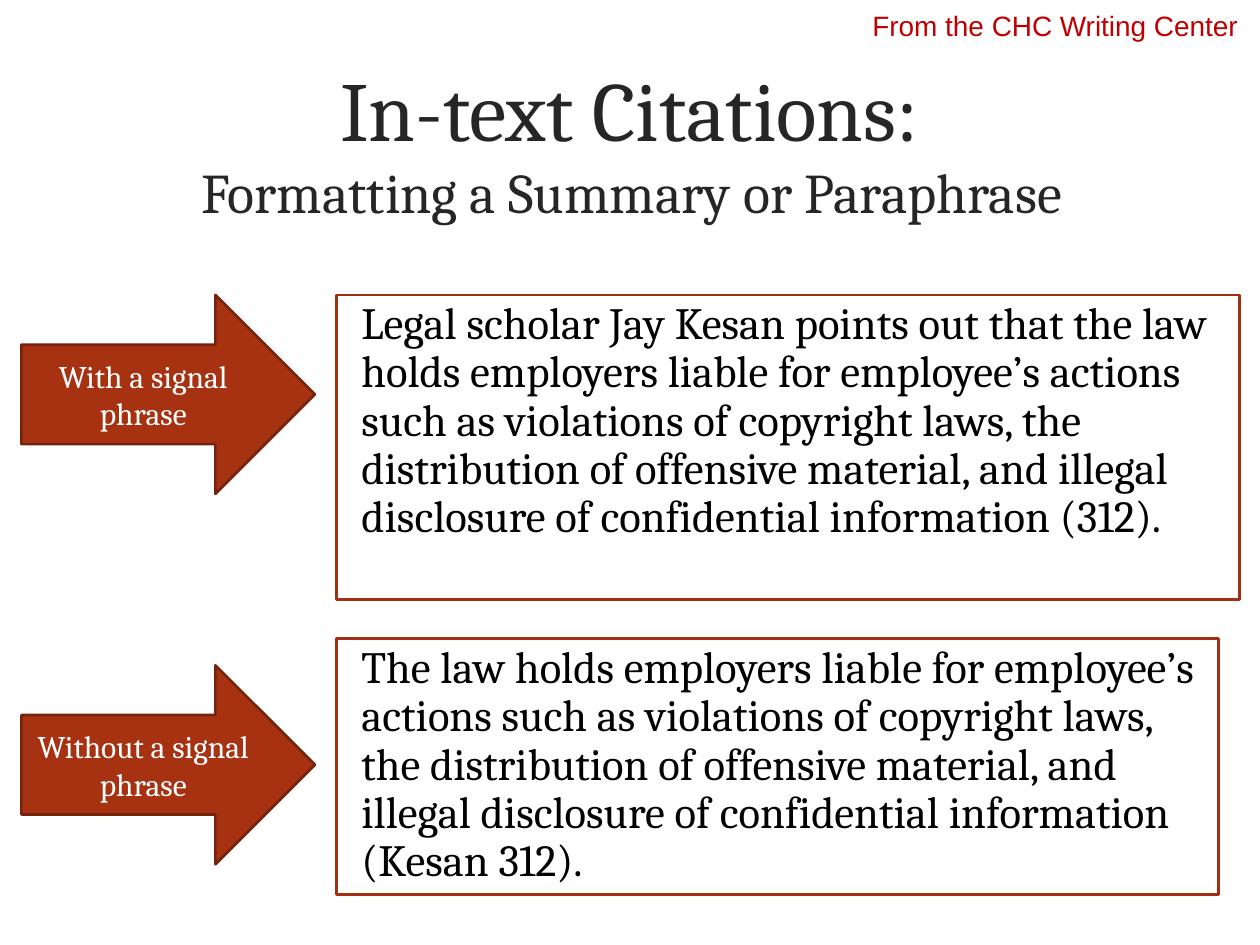
from pptx import Presentation
from pptx.dml.color import RGBColor
from pptx.enum import shapes, text
from pptx.util import Inches, Pt

TITLE_INK = RGBColor(0x26, 0x26, 0x26)
BLACK = RGBColor(0, 0, 0)
WHITE = RGBColor(0xFF, 0xFF, 0xFF)
RUST = RGBColor(0xA6, 0x32, 0x12)
ARROW_EDGE = RGBColor(0x75, 0x23, 0x0C)
BOX_EDGE = RGBColor(0x9F, 0x30, 0x11)
RED = RGBColor(0xC0, 0, 0)

TITLE_LINES = [("In-text Citations: ", 48),
               ("Formatting a Summary or Paraphrase ", 32)]
CREDIT = "From the CHC Writing Center"
LIABILITY = ("holds employers liable for employee’s actions such as violations "
             "of copyright laws, the distribution of offensive material, and "
             "illegal disclosure of confidential information")

# label, arrow top, example, (box top, width, height)
EXAMPLES = [
    ("With a signal phrase", 2.34,
     f"Legal scholar Jay Kesan points out that the law {LIABILITY} (312).",
     (2.34, 7.17, 2.42)),
    ("Without a signal phrase", 5.28,
     f"The law {LIABILITY} (Kesan 312).",
     (5.07, 7, 2.03)),
]
ARROW_LEFT, ARROW_WIDTH, ARROW_HEIGHT = 0.17, 2.33, 1.58
BOX_LEFT = 2.67


def style_run(run, size, color, name="Cambria"):
    run.font.size = Pt(size)
    run.font.name = name
    run.font.color.rgb = color


def write(shape, words, size, color, align, anchor, name="Cambria"):
    frame = shape.text_frame
    frame.word_wrap = True
    frame.vertical_anchor = anchor
    frame.text = words
    paragraph = frame.paragraphs[0]
    paragraph.alignment = align
    style_run(paragraph.runs[0], size, color, name)
    return paragraph


def add_panel(slide, preset, bounds, fill, edge):
    panel = slide.shapes.add_shape(preset, *map(Inches, bounds))
    panel.shadow.inherit = False
    panel.fill.solid()
    panel.fill.fore_color.rgb = fill
    panel.line.color.rgb = edge
    panel.line.width = Pt(1.5)
    return panel


def add_title(slide):
    title = slide.shapes.title
    title.left, title.top, title.width, title.height = map(
        Inches, (0.67, 0.33, 8.79, 1.58))
    frame = title.text_frame
    frame.auto_size = text.MSO_AUTO_SIZE.NONE
    frame.vertical_anchor = text.MSO_ANCHOR.MIDDLE
    paragraph = frame.paragraphs[0]
    paragraph.text = "\v".join(words for words, _ in TITLE_LINES)
    paragraph.alignment = text.PP_ALIGN.CENTER
    for run, (_, size) in zip(paragraph.runs, TITLE_LINES):
        style_run(run, size, TITLE_INK)


def main():
    deck = Presentation()
    deck.slide_width, deck.slide_height = Inches(10), Inches(7.5)
    slide = deck.slides.add_slide(deck.slide_layouts[5])
    add_title(slide)

    for label, arrow_top, example, (top, width, height) in EXAMPLES:
        arrow = add_panel(slide, shapes.MSO_SHAPE.RIGHT_ARROW,
                          (ARROW_LEFT, arrow_top, ARROW_WIDTH, ARROW_HEIGHT),
                          RUST, ARROW_EDGE)
        write(arrow, label, 18, WHITE, text.PP_ALIGN.CENTER,
              text.MSO_ANCHOR.MIDDLE)

        box = add_panel(slide, shapes.MSO_SHAPE.RECTANGLE,
                        (BOX_LEFT, top, width, height), WHITE, BOX_EDGE)
        paragraph = write(box, example, 25.5, BLACK, text.PP_ALIGN.LEFT,
                          text.MSO_ANCHOR.TOP)
        paragraph.line_spacing = 0.9
        paragraph._p.get_or_add_pPr().set("marL", str(Inches(0.1)))

    credit = slide.shapes.add_textbox(*map(Inches, (6.79, 0, 3.17, 0.4)))
    write(credit, CREDIT, 16, RED, text.PP_ALIGN.CENTER,
          text.MSO_ANCHOR.MIDDLE, "Arial")

    deck.save("out.pptx")


if __name__ == "__main__":
    main()
